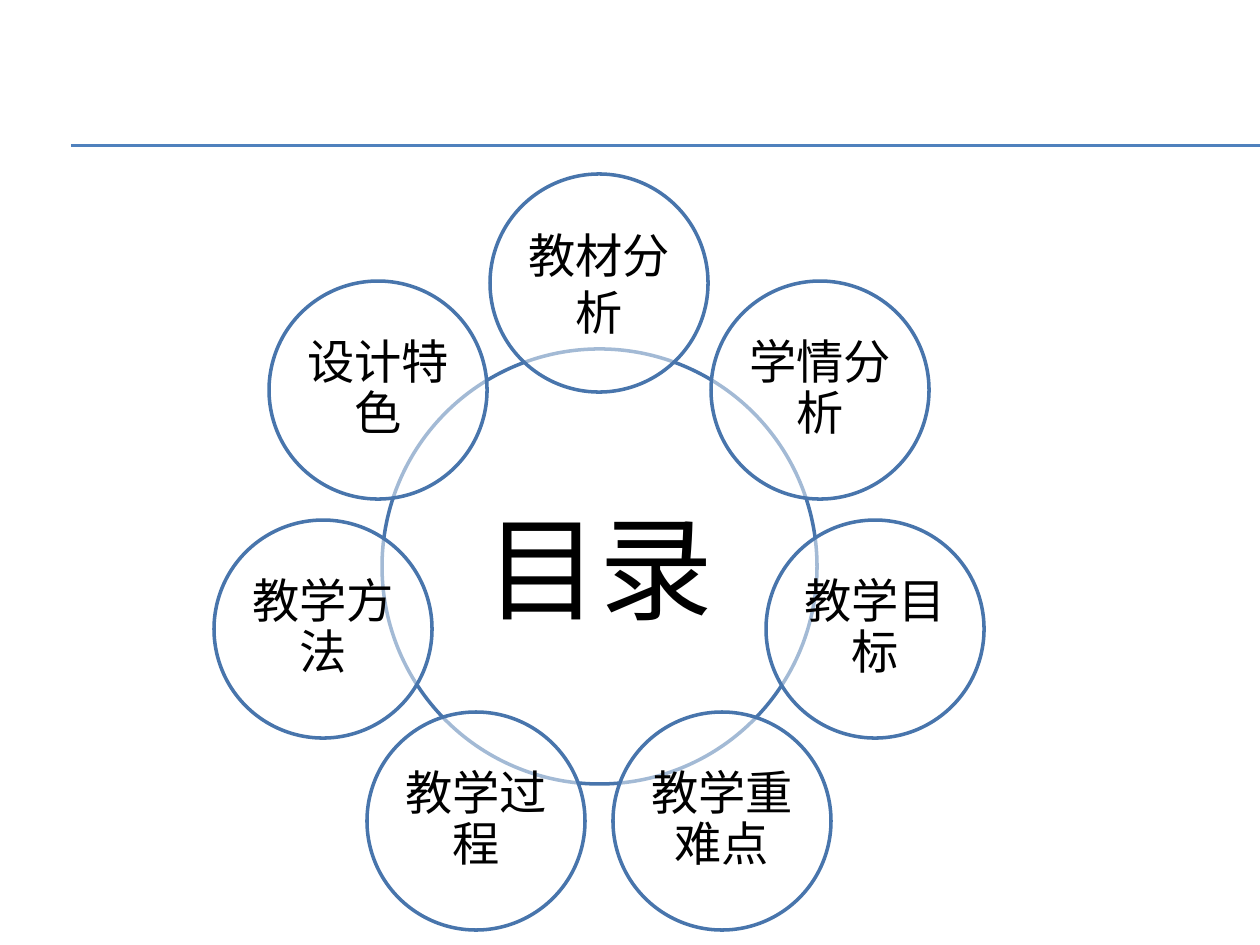
from dataclasses import dataclass
from math import cos, pi, sin

from lxml.etree import SubElement
from pptx import Presentation
from pptx.dml.color import RGBColor
from pptx.enum.shapes import MSO_CONNECTOR, MSO_SHAPE
from pptx.enum.text import MSO_ANCHOR, PP_ALIGN
from pptx.oxml.ns import qn
from pptx.slide import Slide
from pptx.util import Emu, Pt

WHITE = RGBColor(0xFF, 0xFF, 0xFF)
BLACK = RGBColor(0x00, 0x00, 0x00)
BLUE = RGBColor(0x4F, 0x81, 0xBD)
RIM = RGBColor(0x48, 0x75, 0xAC)
FONT = "Lato"
WIDTH, HEIGHT = 1260, 945
MID_X, MID_Y = 599, 566
ORBIT = 283
HUB, PETAL = 435, 218


@dataclass
class Circle:
    text: str
    x: int
    y: int
    size: int
    points: int
    inset: int
    spacing: float = 1.0


def px(count: int) -> Emu:
    return Emu(round(count * 914400 / 126))


def draw_rule(slide: Slide, y: int) -> None:
    rule = slide.shapes.add_connector(
        MSO_CONNECTOR.STRAIGHT, px(71), px(y), px(WIDTH), px(y))
    rule.line.color.rgb = BLUE
    rule.line.width = Pt(0.75)
    SubElement(rule._element.spPr, qn("a:effectLst"))


def draw_circle(slide: Slide, item: Circle) -> None:
    half = item.size // 2
    shape = slide.shapes.add_shape(
        MSO_SHAPE.OVAL, px(item.x - half), px(item.y - half),
        px(item.size), px(item.size))
    shape.shadow.inherit = False
    shape.fill.solid()
    shape.fill.fore_color.rgb = WHITE
    color = shape._element.spPr.find(qn("a:solidFill"))[0]
    SubElement(color, qn("a:alpha"), val="50000")
    shape.line.color.rgb = RIM
    shape.line.width = Pt(2)

    frame = shape.text_frame
    frame.word_wrap = True
    frame.vertical_anchor = MSO_ANCHOR.MIDDLE
    frame.margin_left = frame.margin_right = px(item.inset)
    frame.margin_top = frame.margin_bottom = px(item.inset)
    para = frame.paragraphs[0]
    para.alignment = PP_ALIGN.CENTER
    if item.spacing != 1:
        para.line_spacing = item.spacing
    after = SubElement(para._p.get_or_add_pPr(), qn("a:spcAft"))
    SubElement(after, qn("a:spcPct"), val="35000")
    run = para.add_run()
    run.text = item.text
    run.font.name = FONT
    run.font.size = Pt(item.points)
    run.font.color.rgb = BLACK


def main() -> None:
    deck = Presentation()
    deck.slide_width, deck.slide_height = px(WIDTH), px(HEIGHT)
    slide = deck.slides.add_slide(deck.slide_layouts[6])
    for y in (145, 146):
        draw_rule(slide, y)

    draw_circle(slide, Circle("目录", MID_X, MID_Y, HUB, 65, 11))
    topics = ("教材分析", "学情分析", "教学目标", "教学重难点",
              "教学过程", "教学方法", "设计特色")
    for index, topic in enumerate(topics):
        angle = 2 * pi * index / len(topics)
        x = round(MID_X + ORBIT * sin(angle))
        y = round(MID_Y - ORBIT * cos(angle))
        spacing = 0.9 if index else 1.0
        draw_circle(slide, Circle(topic, x, y, PETAL, 27, 5, spacing))

    deck.save("out.pptx")


if __name__ == "__main__":
    main()
